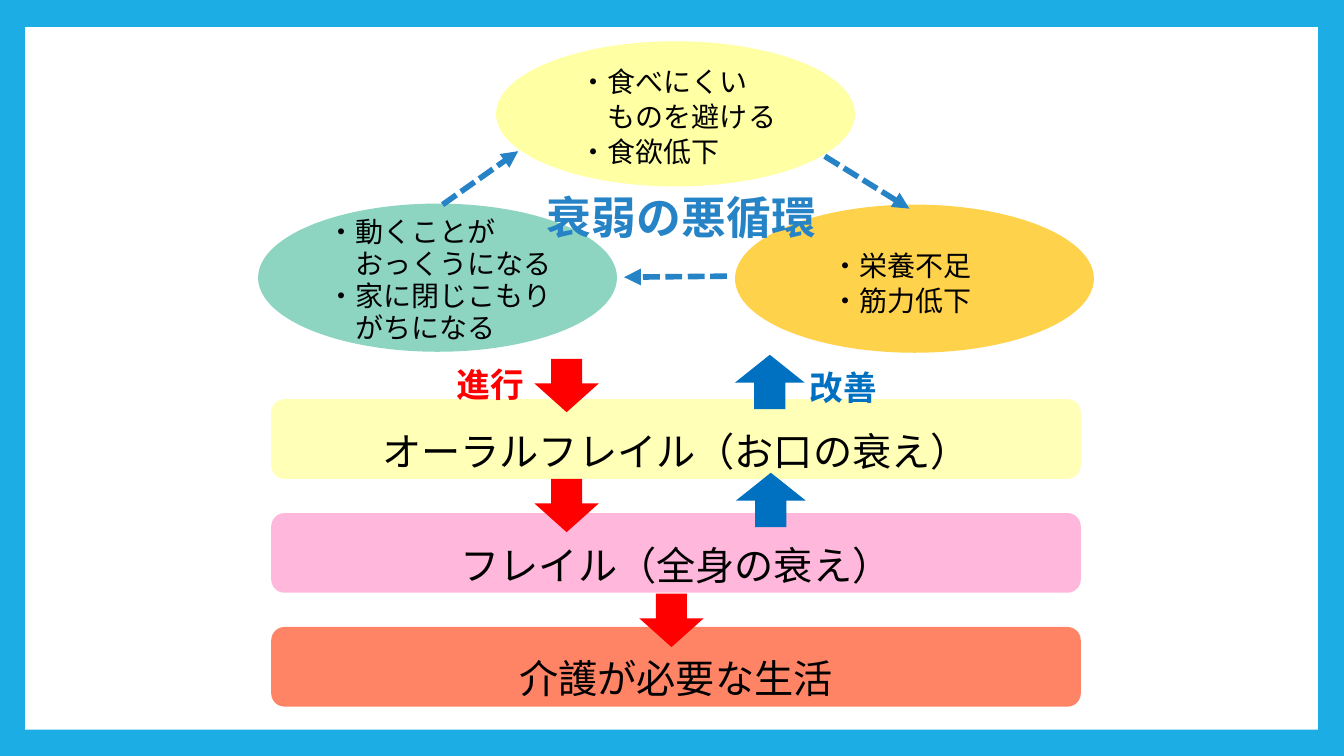
import dataclasses
import typing

import lxml.etree
import pptx
import pptx.dml.color
import pptx.enum.dml
import pptx.enum.shapes
import pptx.enum.text
import pptx.oxml.ns
import pptx.util

EMU_PER_PX = 9144  # 100 px to the inch
SHAPES = pptx.enum.shapes.MSO_SHAPE
ALIGN = pptx.enum.text.PP_ALIGN
ANCHOR = pptx.enum.text.MSO_ANCHOR


@dataclasses.dataclass(frozen=True)
class Theme:
    font: str = "Noto Sans CJK JP"
    frame: str = "1CADE4"
    panel: str = "FFFFFF"
    ink: str = "000000"
    cycle: str = "2683C6"
    progress: str = "FF0000"
    improve: str = "0070C0"
    bar_pt: int = 28
    cause_pt: int = 20
    direction_pt: int = 24
    title_pt: int = 32
    link_pt: int = 4


THEME = Theme()


class Box(typing.NamedTuple):
    left: int
    top: int
    width: int
    height: int


class Stage(typing.NamedTuple):
    text: str
    color: str
    opacity: int


class Cause(typing.NamedTuple):
    oval: Box
    color: str
    opacity: int
    text_box: Box
    leading: int
    lines: tuple[tuple[str, int], ...]  # wording and indent in px


class TextStyle(typing.NamedTuple):
    size: int
    color: str
    leading: int
    bold: bool = False
    align: typing.Any = ALIGN.CENTER


# Content
STAGES = (
    Stage("オーラルフレイル（お口の衰え）", "FFFF99", 70),
    Stage("フレイル（全身の衰え）", "FF99CC", 70),
    Stage("介護が必要な生活", "FF3300", 60),
)
FIRST_BAR, BAR_PITCH = Box(269, 396, 803, 79), 113

INDENT = 28  # one full-width character at the cause size
CAUSES = (
    Cause(Box(492, 41, 356, 144), "FFFF66", 60, Box(565, 58, 222, 115), 25,
          (("・食べにくい", 0), ("ものを避ける", INDENT), ("・食欲低下", 0))),
    Cause(Box(729, 203, 356, 147), "FFC000", 70, Box(815, 240, 222, 80), 25,
          (("・栄養不足", 0), ("・筋力低下", 0))),
    Cause(Box(256, 202, 356, 147), "42BA97", 60, Box(315, 209, 270, 139), 23,
          (("・動くことが", 0), ("おっくうになる", INDENT),
           ("・家に閉じこもり", 0), ("がちになる", INDENT))),
)
CYCLE_LINKS = ((721, 274, 619, 275), (439, 203, 514, 150), (818, 155, 902, 207))
PROGRESS_ARROWS = ((530, 356), (530, 475), (634, 589))
IMPROVE_ARROWS = ((729, 352), (730, 469))
DIRECTIONS = (
    ("進行", Box(434, 350, 105, 55), THEME.progress),
    ("改善", Box(784, 353, 105, 55), THEME.improve),
)


def px(length: int) -> pptx.util.Emu:
    return pptx.util.Emu(length * EMU_PER_PX)


def rgb(color: str) -> pptx.dml.color.RGBColor:
    return pptx.dml.color.RGBColor.from_string(color)


def apply(target: typing.Any, values: dict[str, typing.Any]) -> None:
    for name, value in values.items():
        setattr(target, name, value)


def add_tag(parent: typing.Any, tag: str, **attributes: str) -> None:
    lxml.etree.SubElement(parent, pptx.oxml.ns.qn(tag), attributes)


def write(frame: typing.Any, lines: typing.Iterable[tuple[str, int]],
          style: TextStyle, anchor: typing.Any = ANCHOR.TOP) -> None:
    apply(frame, {"word_wrap": True, "vertical_anchor": anchor,
                  "auto_size": pptx.enum.text.MSO_AUTO_SIZE.NONE})
    for index, (text, indent) in enumerate(lines):
        paragraph = frame.add_paragraph() if index else frame.paragraphs[0]
        apply(paragraph, {"alignment": style.align,
                          "line_spacing": pptx.util.Pt(style.leading)})
        if indent:
            apply_margin = paragraph._p.get_or_add_pPr()
            apply_margin.set("marL", str(px(indent)))
        run = paragraph.add_run()
        run.text = text
        run.font.color.rgb = rgb(style.color)
        apply(run.font, {"name": THEME.font, "bold": style.bold,
                         "size": pptx.util.Pt(style.size)})
        add_tag(run._r.get_or_add_rPr(), "a:ea", typeface=THEME.font)


def draw_shape(slide: typing.Any, kind: typing.Any, box: Box, color: str,
               opacity: int = 100) -> typing.Any:
    shape = slide.shapes.add_shape(kind, *map(px, box))
    shape.shadow.inherit = False
    shape.fill.solid()
    shape.fill.fore_color.rgb = rgb(color)
    shape.line.fill.background()
    if opacity < 100:
        fill_color = shape._element.spPr.find(".//" + pptx.oxml.ns.qn("a:srgbClr"))
        add_tag(fill_color, "a:alpha", val=str(opacity * 1000))
    return shape


def draw_text(slide: typing.Any, box: Box, lines: typing.Iterable[tuple[str, int]],
              style: TextStyle) -> None:
    write(slide.shapes.add_textbox(*map(px, box)).text_frame, lines, style)


def draw_block_arrow(slide: typing.Any, box: Box, color: str, rotation: int,
                     shaft: float, head: float) -> None:
    arrow = draw_shape(slide, SHAPES.DOWN_ARROW, box, color)
    arrow.rotation = rotation
    arrow.adjustments[0], arrow.adjustments[1] = shaft, head


def draw_link(slide: typing.Any, ends: tuple[int, int, int, int]) -> None:
    link = slide.shapes.add_connector(
        pptx.enum.shapes.MSO_CONNECTOR.STRAIGHT, *map(px, ends))
    link.line.color.rgb = rgb(THEME.cycle)
    apply(link.line, {"width": pptx.util.Pt(THEME.link_pt),
                      "dash_style": pptx.enum.dml.MSO_LINE.SQUARE_DOT})
    add_tag(link.line._get_or_add_ln(), "a:tailEnd", type="triangle")
    add_tag(link._element.spPr, "a:effectLst")


def main() -> None:
    deck = pptx.Presentation()
    apply(deck, {"slide_width": px(1333), "slide_height": px(750)})
    slide = deck.slides.add_slide(deck.slide_layouts[5])

    # Frame and white panel
    slide.background.fill.solid()
    slide.background.fill.fore_color.rgb = rgb(THEME.frame)
    draw_shape(slide, SHAPES.RECTANGLE, Box(25, 27, 1282, 697), THEME.panel)

    # Stages of decline
    for row, stage in enumerate(STAGES):
        bar = draw_shape(slide, SHAPES.FLOWCHART_ALTERNATE_PROCESS,
                         FIRST_BAR._replace(top=FIRST_BAR.top + row * BAR_PITCH),
                         stage.color, stage.opacity)
        write(bar.text_frame, [(stage.text, 0)],
              TextStyle(THEME.bar_pt, THEME.ink, 50), ANCHOR.MIDDLE)

    # Progress and improvement between stages
    for left, top in PROGRESS_ARROWS:
        draw_block_arrow(slide, Box(left, top, 64, 53), THEME.progress, 0, 0.48, 0.54)
    for left, top in IMPROVE_ARROWS:
        draw_block_arrow(slide, Box(left, top, 69, 54), THEME.improve, 180, 0.45, 0.51)
    for text, box, color in DIRECTIONS:
        draw_text(slide, box, [(text, 0)],
                  TextStyle(THEME.direction_pt, color, 33, bold=True))

    # Vicious cycle
    for cause in CAUSES:
        draw_shape(slide, SHAPES.OVAL, cause.oval, cause.color, cause.opacity)
        draw_text(slide, cause.text_box, cause.lines,
                  TextStyle(THEME.cause_pt, THEME.ink, cause.leading, align=ALIGN.LEFT))
    for ends in CYCLE_LINKS:
        draw_link(slide, ends)

    # Title, brought in front of the ovals
    title = slide.shapes.title
    apply(title, dict(zip(Box._fields, map(px, Box(530, 191, 292, 62)))))
    write(title.text_frame, [("衰弱の悪循環", 0)],
          TextStyle(THEME.title_pt, THEME.cycle, 33, bold=True))
    slide.shapes._spTree.append(title._element)

    deck.save("out.pptx")


if __name__ == "__main__":
    main()
